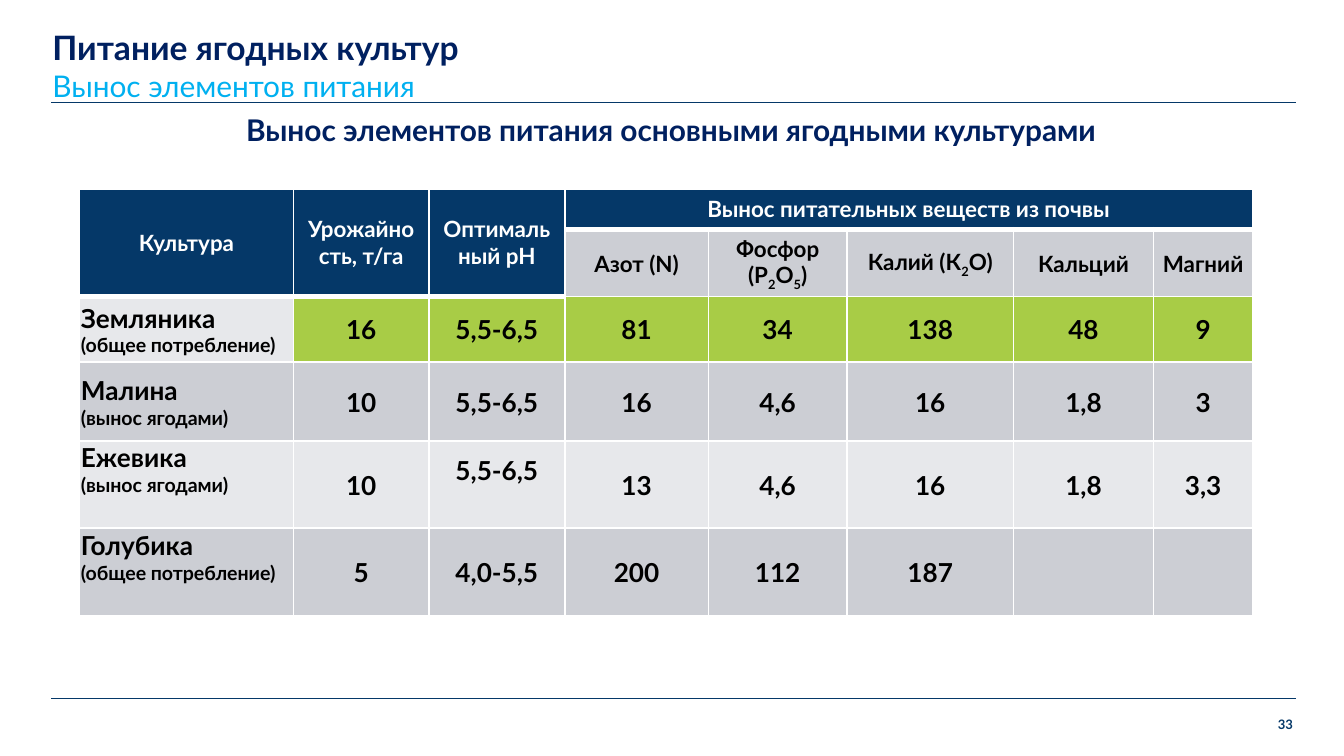
import itertools
import pptx
import pptx.util
import pptx.dml.color
import pptx.enum.text
import pptx.enum.shapes
from lxml import etree
from pptx.util import Pt
from pptx.enum.text import MSO_ANCHOR, MSO_AUTO_SIZE, PP_ALIGN

FONT = "Lato"
NAVY, INK, SKY = "053868", "002060", "00B0F0"
WHITE, BLACK, GREEN = "FFFFFF", "000000", "A8CC46"
GREY, PALE = "CCCED4", "E7E8EB"

COLS = [114.5, 72.7, 72.7, 77, 74.2, 89.3, 74.9, 53.3]
ROWS = [21.2, 36, 35, 42.3, 46.8, 46.8]
HEADERS = ["Культура", "Урожайность, т/га", "Оптимальный рН",
           "Вынос питательных веществ из почвы"]
NUTRIENTS = ["Азот (N)", "Фосфор (Р2О5)", "Калий (К2О)", "Кальций", "Магний"]
TOTAL, BERRIES = "(общее потребление)", "(вынос ягодами)"
# Name, note, name fill, value fill, name anchor, values
CROPS = [
    ("Земляника", TOTAL, PALE, GREEN, MSO_ANCHOR.MIDDLE,
     ["16", "5,5-6,5", "81", "34", "138", "48", "9"]),
    ("Малина", BERRIES, GREY, GREY, MSO_ANCHOR.MIDDLE,
     ["10", "5,5-6,5", "16", "4,6", "16", "1,8", "3"]),
    ("Ежевика", BERRIES, PALE, PALE, MSO_ANCHOR.TOP,
     ["10", "5,5-6,5", "13", "4,6", "16", "1,8", "3,3"]),
    ("Голубика", TOTAL, GREY, GREY, MSO_ANCHOR.TOP,
     ["5", "4,0-5,5", "200", "112", "187", "", ""]),
]


def rgb(color):
    return pptx.dml.color.RGBColor.from_string(color)


def style(p, size, color, bold=True, align=PP_ALIGN.LEFT):
    p.alignment = align
    p.font.name, p.font.size, p.font.bold = FONT, Pt(size), bold
    p.font.color.rgb = rgb(color)


def set_margins(frame, left, top, right, bottom):
    frame.margin_left, frame.margin_top = Pt(left), Pt(top)
    frame.margin_right, frame.margin_bottom = Pt(right), Pt(bottom)


def place(sp, x, y, w, h):
    sp.left, sp.top, sp.width, sp.height = Pt(x), Pt(y), Pt(w), Pt(h)


def add_rule(s, x, y, w):
    line = s.shapes.add_connector(pptx.enum.shapes.MSO_CONNECTOR.STRAIGHT,
                                  Pt(x), Pt(y), Pt(x + w), Pt(y))
    line.line.color.rgb = rgb(NAVY)
    line.line.width = Pt(0.25)
    etree.SubElement(line._element.spPr, pptx.oxml.ns.qn("a:effectLst"))


def add_title(s, x, y, w, h):
    sp = s.shapes.title
    place(sp, x, y, w, h)
    tf = sp.text_frame
    tf.auto_size = MSO_AUTO_SIZE.NONE
    tf.vertical_anchor = MSO_ANCHOR.TOP
    set_margins(tf, 0, 0, 0, 0)
    tf.text = "Питание ягодных культур\nВынос элементов питания"
    style(tf.paragraphs[0], 18, INK)
    style(tf.paragraphs[1], 16, SKY, bold=False)


def add_text(s, text, x, y, w, h, size, color, align, margins):
    sp = s.shapes.add_textbox(Pt(x), Pt(y), Pt(w), Pt(h))
    tf = sp.text_frame
    tf.word_wrap = True
    set_margins(tf, *margins)
    tf.text = text
    style(tf.paragraphs[0], size, color, align=align)


def format_cell(cell, fill, bottom=1):
    cell.vertical_anchor = MSO_ANCHOR.MIDDLE
    tcPr = cell._tc.get_or_add_tcPr()
    for side, width in zip("LRTB", (1, 1, 1, bottom)):
        ln = etree.SubElement(tcPr, pptx.oxml.ns.qn("a:ln" + side),
                              w=str(Pt(width)))
        solid = etree.SubElement(ln, pptx.oxml.ns.qn("a:solidFill"))
        etree.SubElement(solid, pptx.oxml.ns.qn("a:srgbClr"), val=WHITE)
    cell.fill.solid()
    cell.fill.fore_color.rgb = rgb(fill)


def write_formula(p, text):
    """Write text with its digits as subscripts."""
    for is_digit, chars in itertools.groupby(text, str.isdigit):
        r = p.add_run()
        r.text = "".join(chars)
        if is_digit:
            r._r.get_or_add_rPr().set("baseline", "-25000")


def add_table(s, x, y):
    frame = s.shapes.add_table(len(ROWS), len(COLS), Pt(x), Pt(y),
                               Pt(sum(COLS)), Pt(sum(ROWS)))
    table = frame.table
    table.first_row = table.horz_banding = False
    for column, width in zip(table.columns, COLS):
        column.width = Pt(width)
    for row, height in zip(table.rows, ROWS):
        row.height = Pt(height)

    # Header: three tall cells and one wide cell
    for c in range(len(COLS)):
        format_cell(table.cell(0, c), NAVY, bottom=3)
    for c in range(3):
        format_cell(table.cell(1, c), NAVY, bottom=3)
        table.cell(0, c).merge(table.cell(1, c))
    table.cell(0, 3).merge(table.cell(0, len(COLS) - 1))
    for c, text in enumerate(HEADERS):
        cell = table.cell(0, c)
        cell.text = text
        style(cell.text_frame.paragraphs[0], 12, WHITE, align=PP_ALIGN.CENTER)

    # Nutrient names
    for c, text in enumerate(NUTRIENTS, 3):
        cell = table.cell(1, c)
        format_cell(cell, GREY)
        set_margins(cell, 0.7, 0.7, 0.7, 0)
        p = cell.text_frame.paragraphs[0]
        write_formula(p, text)
        style(p, 12, BLACK, align=PP_ALIGN.CENTER)

    # Crops
    for r, (name, note, name_fill, fill, anchor, values) in enumerate(CROPS, 2):
        cell = table.cell(r, 0)
        format_cell(cell, name_fill)
        cell.vertical_anchor = anchor
        set_margins(cell, 0.7, 0.7, 0.7, 0)
        cell.text = name + "\n" + note
        style(cell.text_frame.paragraphs[0], 14, BLACK)
        style(cell.text_frame.paragraphs[1], 10.5, BLACK)
        for c, value in enumerate(values, 1):
            cell = table.cell(r, c)
            format_cell(cell, fill)
            raised = name == "Ежевика" and c == 2
            set_margins(cell, 0.7, 0.7, 0.7, 16 if raised else 0)
            cell.text = value
            style(cell.text_frame.paragraphs[0], 14, BLACK,
                  align=PP_ALIGN.CENTER)


def main():
    prs = pptx.Presentation()
    prs.slide_width, prs.slide_height = Pt(720), Pt(405)
    s = prs.slides.add_slide(prs.slide_layouts[5])
    for y in (54.8, 373.9):
        add_rule(s, 27.4, y, 666.7)
    add_title(s, 28.1, 14.4, 666, 44.6)
    add_text(s, "33", 682.5, 383.8, 10.2, 10, 7, NAVY, PP_ALIGN.RIGHT,
             (0, 0, 0, 0))
    add_table(s, 42.7, 101.2)
    add_text(s, "Вынос элементов питания основными ягодными культурами",
             26.6, 56.4, 666, 26.6, 16, INK, PP_ALIGN.CENTER,
             (7.2, 3.6, 7.2, 3.6))
    prs.save("out.pptx")


if __name__ == "__main__":
    main()
